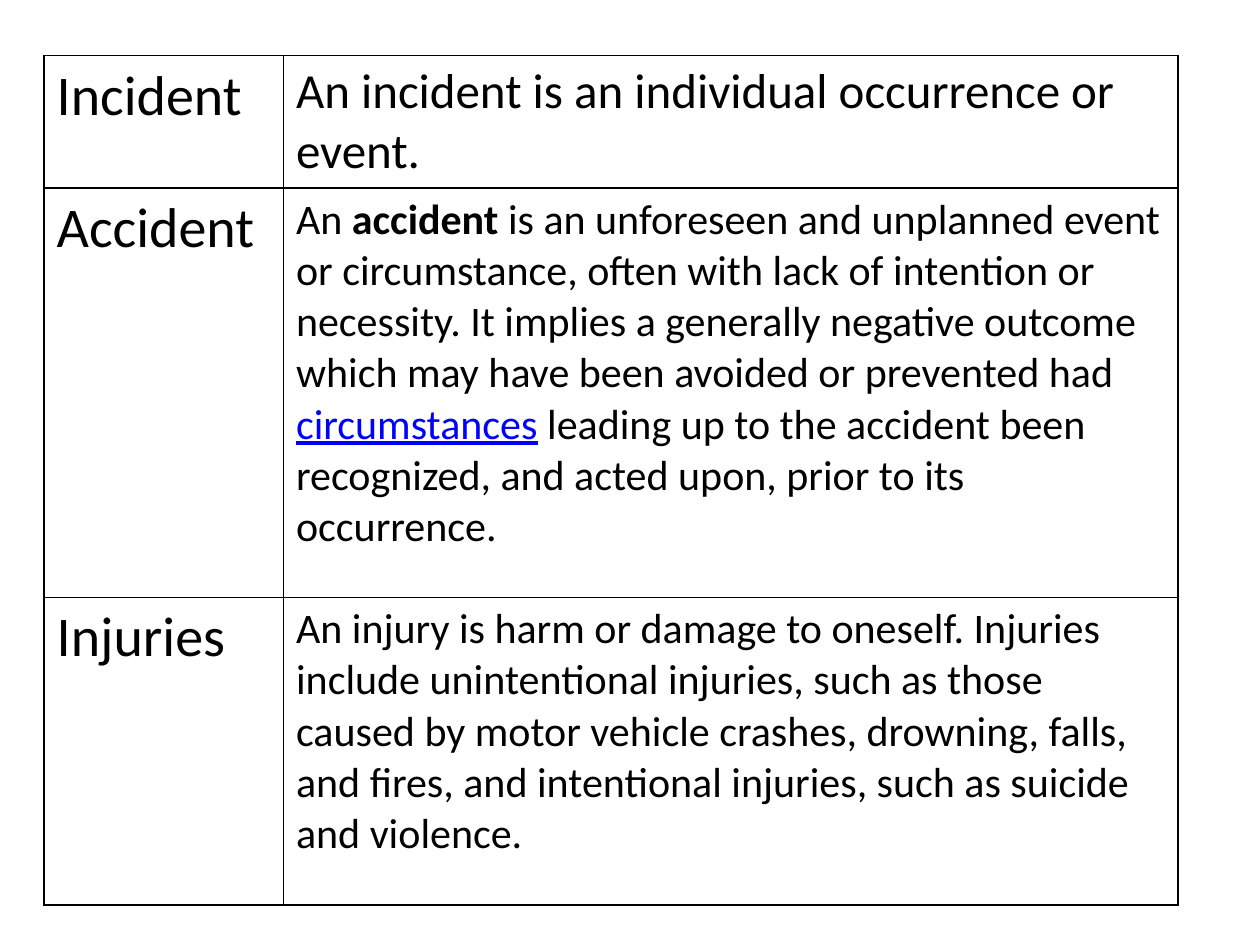
from lxml import etree
from pptx import Presentation
from pptx.dml.color import RGBColor
from pptx.oxml.ns import qn
from pptx.util import Inches, Pt

FONT = "Calibri"
BLACK = "000000"
LINK_BLUE = "0000FF"
TERM_SIZE = 32
COLUMN_WIDTHS = (1.9, 7.1)
ROW_HEIGHTS = (1.05, 3.25, 2.44)

DEFINITIONS = [
    ("Incident", 28, [("An incident is an individual occurrence or event.", "")]),
    ("Accident", 24, [
        ("An ", ""),
        ("accident", "bold"),
        (" is an unforeseen and unplanned event or circumstance, often with lack of "
         "intention or necessity. It implies a generally negative outcome which may "
         "have been avoided or prevented had ", ""),
        ("circumstances", "link"),
        (" leading up to the accident been recognized, and acted upon, prior to its "
         "occurrence.", ""),
    ]),
    ("Injuries", 24, [
        ("An injury is harm or damage to oneself. Injuries include unintentional "
         "injuries, such as those caused by motor vehicle crashes, drowning, falls, "
         "and fires, and intentional injuries, such as suicide and violence.", ""),
    ]),
]


def rgb(color):
    """Return the colour object for a hex string."""
    return RGBColor.from_string(color)


def add_borders(cell, color=BLACK, width=1):
    """Draw a solid line on all four sides of a cell."""
    properties = cell._tc.get_or_add_tcPr()
    for side in ("a:lnL", "a:lnR", "a:lnT", "a:lnB"):
        line = etree.SubElement(properties, qn(side), w=str(Pt(width)))
        fill = etree.SubElement(line, qn("a:solidFill"))
        etree.SubElement(fill, qn("a:srgbClr"), val=color)


def fill_cell(cell, runs, size):
    """Write styled runs into a bordered cell without fill."""
    add_borders(cell)
    cell.fill.background()
    paragraph = cell.text_frame.paragraphs[0]
    for text, style in runs:
        run = paragraph.add_run()
        run.text = text
        run.font.name = FONT
        run.font.size = Pt(size)
        run.font.bold = style == "bold"
        run.font.underline = style == "link"
        run.font.color.rgb = rgb(LINK_BLUE if style == "link" else BLACK)


def add_definition_table(slide):
    """Add the table of terms and their definitions."""
    table = slide.shapes.add_table(
        len(DEFINITIONS), len(COLUMN_WIDTHS), Inches(0.35), Inches(0.44),
        Inches(sum(COLUMN_WIDTHS)), Inches(sum(ROW_HEIGHTS))).table
    table.first_row = False
    table.horz_banding = False
    for column, width in zip(table.columns, COLUMN_WIDTHS):
        column.width = Inches(width)
    for row, height, (term, size, definition) in zip(table.rows, ROW_HEIGHTS, DEFINITIONS):
        row.height = Inches(height)
        term_cell, definition_cell = row.cells
        fill_cell(term_cell, [(term, "")], TERM_SIZE)
        fill_cell(definition_cell, definition, size)


def main():
    """Build the slide and save it."""
    presentation = Presentation()
    presentation.slide_width = Inches(10)
    presentation.slide_height = Inches(7.5)
    slide = presentation.slides.add_slide(presentation.slide_layouts[6])
    add_definition_table(slide)
    presentation.save("out.pptx")


if __name__ == "__main__":
    main()
